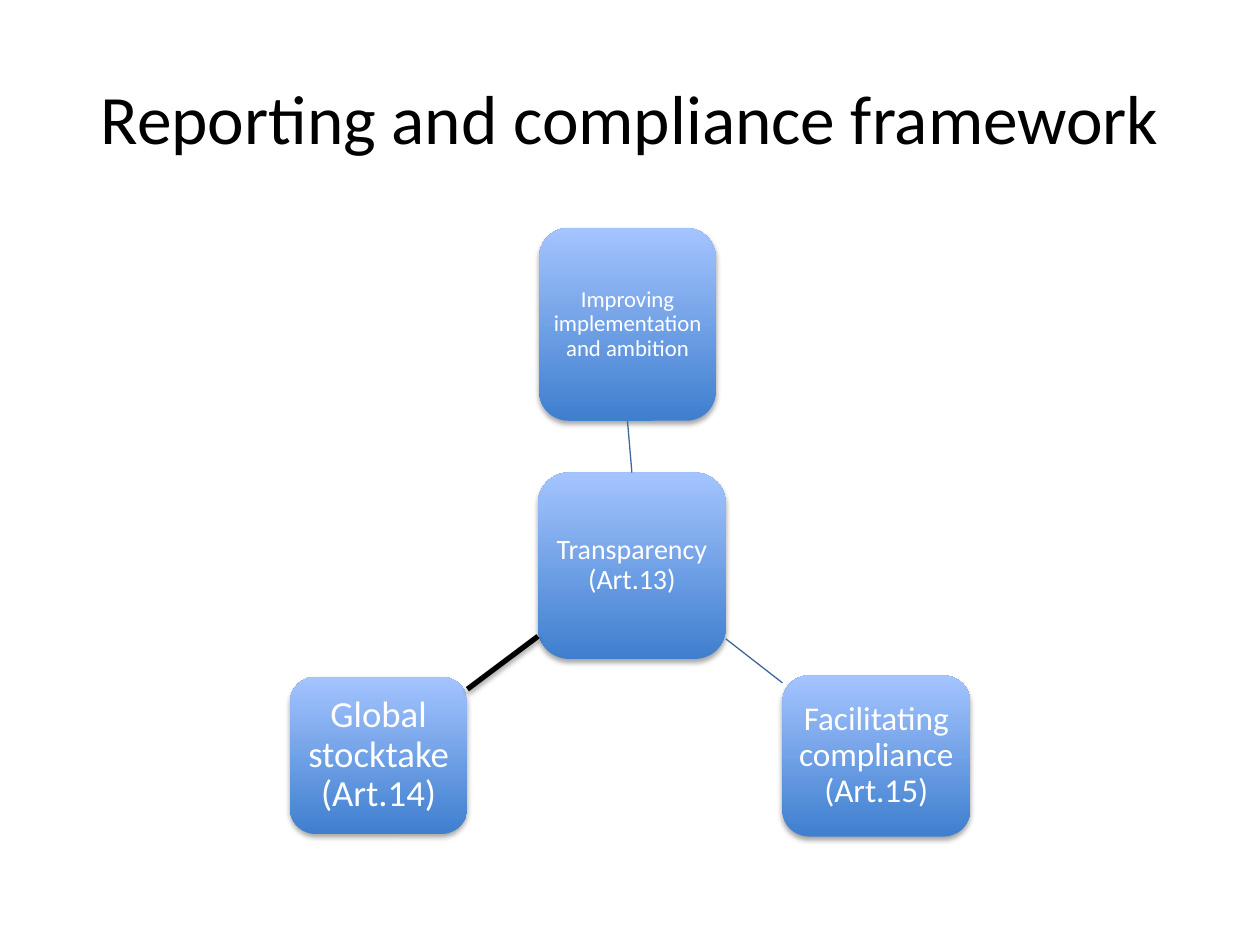
import pptx
import pptx.util
import pptx.dml.color
import pptx.enum.shapes
import pptx.enum.text
import pptx.oxml
import pptx.oxml.ns

Inches, Pt = pptx.util.Inches, pptx.util.Pt
RGB = pptx.dml.color.RGBColor.from_string

THEME = {
    "font": "Calibri",
    "title": "000000",
    "label": "FFFFFF",
    "box_bottom": "3F7FCE",
    "box_top": "A4C4FF",
    "link": "3F6797",
    "strong_link": "000000",
    "title_size": 39.6,
    "hub_size": 16,
    "ambition_size": 13,
    "compliance_size": 19,
    "stocktake_size": 21,
}


def write(tf, text, size, color, spacing=1.0, inset=0.1):
    tf.word_wrap = True
    tf.auto_size = pptx.enum.text.MSO_AUTO_SIZE.NONE
    tf.vertical_anchor = pptx.enum.text.MSO_ANCHOR.MIDDLE
    tf.margin_left = tf.margin_right = Inches(inset)
    tf.margin_top = tf.margin_bottom = Inches(inset)
    p = tf.paragraphs[0]
    p.alignment = pptx.enum.text.PP_ALIGN.CENTER
    p.line_spacing = spacing
    r = p.add_run()
    r.text = text
    r.font.name = THEME["font"]
    r.font.size = Pt(size)
    r.font.color.rgb = RGB(color)


def set_effect(sp, shadow):
    outer = (
        f'<a:outerShdw blurRad="{Pt(3.1)}" dist="{Pt(1.8)}" dir="5400000" rotWithShape="0">'
        '<a:srgbClr val="000000"><a:alpha val="35000"/></a:srgbClr></a:outerShdw>'
    )
    xml = f'<a:effectLst {pptx.oxml.ns.nsdecls("a")}>{outer if shadow else ""}</a:effectLst>'
    sp._element.spPr.append(pptx.oxml.parse_xml(xml))


prs = pptx.Presentation()
prs.slide_width, prs.slide_height = Inches(10), Inches(7.5)
s = prs.slides.add_slide(prs.slide_layouts[5])

title = s.shapes.title
title.left, title.top, title.width, title.height = map(Inches, (0.5, 0.3, 9, 1.25))
write(title.text_frame, "Reporting and compliance framework", THEME["title_size"], THEME["title"])

boxes = {}
for name, text, bounds in (
    ("hub", "Transparency (Art.13)", (4.27, 3.75, 1.49, 1.48)),
    ("ambition", "Improving implementation and ambition", (4.28, 1.81, 1.4, 1.53)),
    ("compliance", "Facilitating compliance (Art.15)", (6.21, 5.36, 1.49, 1.28)),
    ("stocktake", "Global stocktake (Art.14)", (2.3, 5.37, 1.41, 1.25)),
):
    sp = s.shapes.add_shape(
        pptx.enum.shapes.MSO_SHAPE.ROUNDED_RECTANGLE, *map(Inches, bounds)
    )
    sp.fill.gradient()
    sp.fill.gradient_angle = 90
    for position, color in enumerate(("box_bottom", "box_top")):
        stop = sp.fill.gradient_stops[position]
        stop.color.rgb = RGB(THEME[color])
        stop.position = position
    sp.line.fill.background()
    set_effect(sp, shadow=True)
    write(sp.text_frame, text, THEME[f"{name}_size"], THEME["label"], spacing=0.9, inset=0.03)
    boxes[name] = sp

for name, ends, color, width in (
    ("ambition", (5.01, 3.75, 4.98, 3.34), "link", 0.75),
    ("compliance", (5.76, 5.07, 6.21, 5.42), "link", 0.75),
    ("stocktake", (4.27, 5.05, 3.71, 5.47), "strong_link", 3),
):
    link = s.shapes.add_connector(
        pptx.enum.shapes.MSO_CONNECTOR.STRAIGHT, *map(Inches, ends)
    )
    link.line.color.rgb = RGB(THEME[color])
    link.line.width = Pt(width)
    set_effect(link, shadow=color == "strong_link")
    if name == "ambition":
        link.begin_connect(boxes["hub"], 0)
        link.end_connect(boxes[name], 2)

prs.save("out.pptx")
